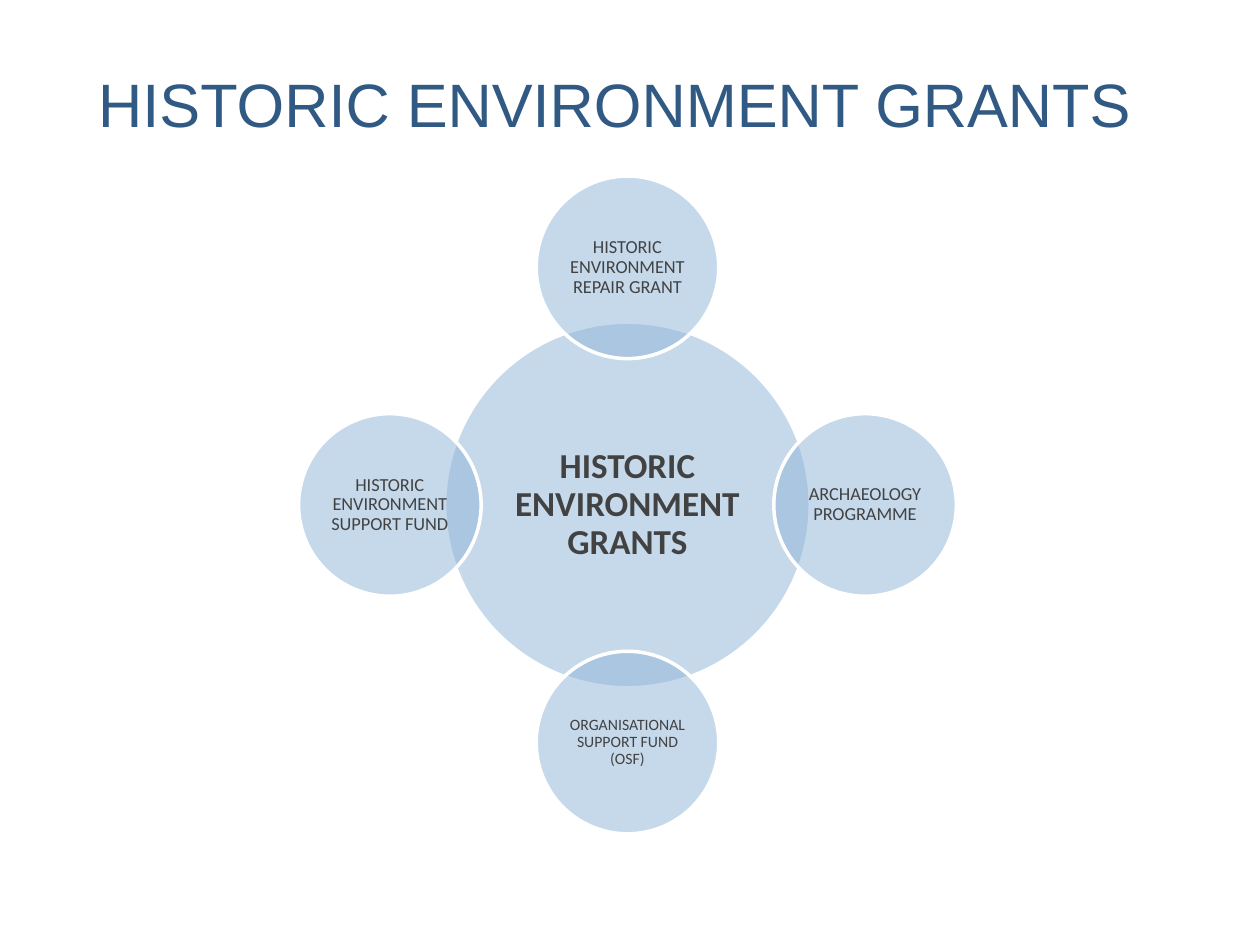
"""Build the historic environment grants slide: a hub circle with four satellites."""
import math

from pptx import Presentation
from pptx import util as u
from pptx.dml.color import RGBColor
from pptx.enum import shapes, text
from pptx.oxml import parse_xml
from pptx.oxml.ns import nsdecls

COLOURS = {"title": "305983", "circle": "8FB4D9", "outline": "FFFFFF", "label": "424242"}
CENTRE_X, CENTRE_Y = 12.65, 10.18
HUB_DIAMETER, SATELLITE_DIAMETER, ORBIT = 7.37, 3.68, 4.79
SATELLITES = [
    ("HISTORIC ENVIRONMENT REPAIR GRANT", 10.5, 0.05),
    ("ARCHAEOLOGY PROGRAMME", 10.5, 0.05),
    ("ORGANISATIONAL SUPPORT FUND (OSF)", 9, 0.03),
    ("HISTORIC ENVIRONMENT SUPPORT FUND", 10.5, 0.05),
]


def colour(name):
    return RGBColor.from_string(COLOURS[name])


def write(tf, words, font, size, ink, align, bold=False):
    tf.text = words
    tf.word_wrap = True
    p = tf.paragraphs[0]
    p.alignment = align
    p.line_spacing = 0.9
    r = p.runs[0]
    r.font.name = font
    r.font.size = u.Pt(size)
    r.font.bold = bold
    r.font.color.rgb = colour(ink)


def set_margins(tf, left, top, right, bottom):
    tf.margin_left, tf.margin_top = u.Cm(left), u.Cm(top)
    tf.margin_right, tf.margin_bottom = u.Cm(right), u.Cm(bottom)


def add_title(s, words):
    sp = s.shapes.title
    sp.left, sp.top, sp.width, sp.height = u.Cm(1.98), u.Cm(1.4), u.Cm(22.17), u.Cm(1.68)
    tf = sp.text_frame
    write(tf, words, "Arial", 35, "title", text.PP_ALIGN.LEFT)
    tf.auto_size = text.MSO_AUTO_SIZE.NONE
    tf.vertical_anchor = text.MSO_ANCHOR.TOP
    set_margins(tf, 0, 0.1, 0, 0)


def add_circle(s, x, y, diameter, words, size, margin, bold=False):
    sp = s.shapes.add_shape(
        shapes.MSO_SHAPE.OVAL, u.Cm(x - diameter / 2), u.Cm(y - diameter / 2),
        u.Cm(diameter), u.Cm(diameter))
    sp.shadow.inherit = False
    sp.fill.solid()
    sp.fill.fore_color.rgb = colour("circle")
    rgb = sp.fill._xPr.solidFill.srgbClr
    rgb.append(parse_xml(f'<a:alpha {nsdecls("a")} val="50000"/>'))
    sp.line.color.rgb = colour("outline")
    sp.line.width = u.Pt(2)
    tf = sp.text_frame
    write(tf, words, "Calibri", size, "label", text.PP_ALIGN.CENTER, bold)
    tf.vertical_anchor = text.MSO_ANCHOR.MIDDLE
    set_margins(tf, margin, margin, margin, margin)


def main():
    prs = Presentation()
    prs.slide_width, prs.slide_height = u.Cm(25.4), u.Cm(19.05)
    s = prs.slides.add_slide(prs.slide_layouts[5])
    add_title(s, "HISTORIC ENVIRONMENT GRANTS")
    add_circle(s, CENTRE_X, CENTRE_Y, HUB_DIAMETER,
               "HISTORIC ENVIRONMENT GRANTS", 20, 0.07, bold=True)
    for i, (words, size, margin) in enumerate(SATELLITES):
        angle = 2 * math.pi * i / len(SATELLITES)
        add_circle(s, CENTRE_X + ORBIT * math.sin(angle), CENTRE_Y - ORBIT * math.cos(angle),
                   SATELLITE_DIAMETER, words, size, margin)
    prs.save("out.pptx")


if __name__ == "__main__":
    main()
